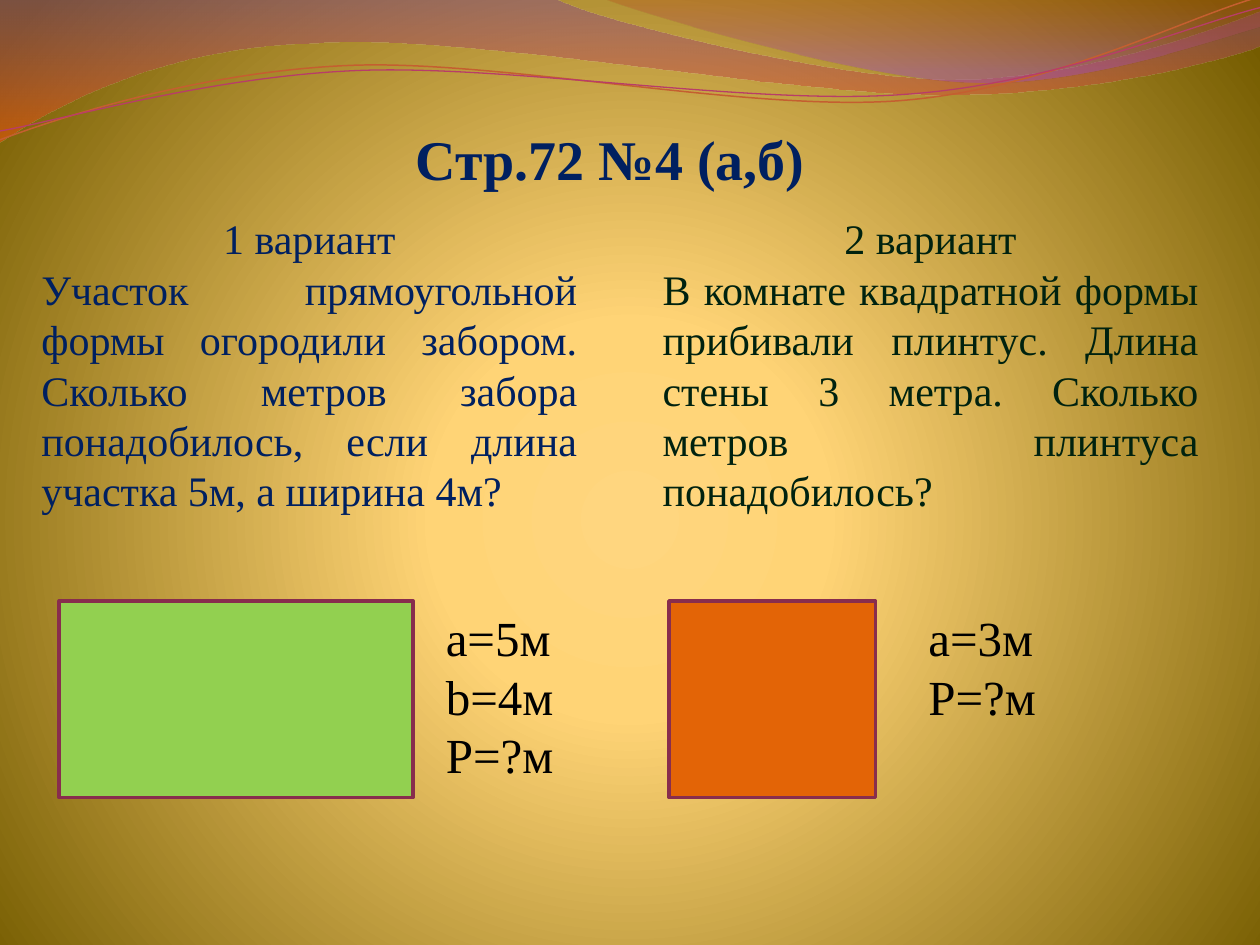
import math
from dataclasses import dataclass
from typing import Optional

import pptx
import pptx.dml.color
import pptx.enum.shapes
import pptx.enum.text
import pptx.oxml
import pptx.oxml.ns
import pptx.util

Inches = pptx.util.Inches
Align = pptx.enum.text.PP_ALIGN
qn = pptx.oxml.ns.qn
SPACE = pptx.oxml.ns.nsdecls("a")


@dataclass(frozen=True)
class Theme:
    font: str = "Times New Roman"
    navy: str = "002060"
    green: str = "00220F"
    black: str = "000000"
    edge: str = "882D4D"
    head: int = 32
    body: int = 24
    note: int = 28
    glow: tuple = ((0, "FFD67F", 100), (25, "FFD476", 100), (100, "755C00", 100))


@dataclass(frozen=True)
class Wave:
    """Outline in slide inches: a start, then lines (2 numbers) or curves (6)."""
    frame: tuple
    start: tuple
    steps: tuple
    stops: tuple = ()
    color: Optional[str] = None
    width: float = 0
    turn: float = 0


@dataclass(frozen=True)
class Task:
    left: float
    color: str
    name: str
    text: str
    box_left: float
    box_width: float
    box_fill: str
    note_left: float
    note_height: float
    notes: tuple


THEME = Theme()
DOWN = '<a:lin ang="5400000" scaled="0"/>'
ROUND = ('<a:path path="circle"><a:fillToRect l="10000" t="110000" '
         'r="10000" b="100000"/></a:path>')

WAVES = (
    Wave((-0.01, -0.01, 10.02, 1.14), (0, 0),
         ((4.4, -0.01), (4.76, 0.17, 6.64, 0.63, 7.58, 0.63),
          (8.53, 0.63, 9.58, 0.26, 10, 0.09), (10.01, 0.36),
          (9.83, 0.44, 8.7, 0.76, 7.46, 0.75),
          (6.22, 0.75, 3.82, 0.28, 2.57, 0.34),
          (1.29, 0.36, 0.46, 0.83, -0.01, 1.13), (0, 0)),
         stops=((0, "834591", 45), (100, "F35307", 55))),
    Wave((4.79, -0.01, 5.21, 0.7), (4.79, -0.01),
         ((5.09, 0.11, 6.82, 0.62, 7.69, 0.65),
          (8.56, 0.69, 9.61, 0.32, 10, 0.21), (10, 0), (4.79, -0.01)),
         stops=((0, "B74915", 30), (80, "A14BB4", 45))),
    Wave((-0.02, 0.22, 10.02, 0.71), (0, 1.11),
         ((0.48, 0.93, 1.58, 0.57, 2.77, 0.52),
          (3.95, 0.47, 5.93, 0.89, 7.13, 0.8),
          (8.33, 0.71, 9.38, 0.15, 9.98, -0.02)),
         color="C45F30", width=0.85, turn=-2.7),
    Wave((-0.02, 0.3, 10.03, 0.58), (0, 1.04),
         ((0.47, 0.96, 1.64, 0.61, 2.83, 0.56),
          (4.03, 0.51, 5.97, 0.84, 7.17, 0.75),
          (8.36, 0.67, 9.41, 0.21, 10, 0.06)),
         color="B83D68", width=0.75, turn=-2.7),
)

TASKS = (
    Task(0.23, THEME.navy, "1 вариант",
         "Участок прямоугольной формы огородили забором. Сколько метров забора "
         "понадобилось, если длина участка 5м, а ширина 4м?",
         0.47, 2.81, "92D050", 3.44, 1.51, ("а=5м", "b=4м", "Р=?м")),
    Task(5.16, THEME.green, "2 вариант",
         "В комнате квадратной формы прибивали плинтус. Длина стены 3 метра. "
         "Сколько метров плинтуса понадобилось?",
         5.31, 1.64, "E36406", 7.27, 1.04, ("а=3м", "Р=?м")),
)


def rgb(code: str):
    return pptx.dml.color.RGBColor.from_string(code)


def shade(fill, root, stops: tuple, path: str) -> None:
    """Give a fill gradient stops with opacity and a direction."""
    fill.gradient()
    marks = ""
    for pos, code, alpha in stops:
        veil = f'<a:alpha val="{alpha * 1000}"/>' if alpha < 100 else ""
        marks += (f'<a:gs pos="{pos * 1000}"><a:srgbClr val="{code}">'
                  f'{veil}</a:srgbClr></a:gs>')
    old = root.find(".//" + qn("a:gradFill"))
    new = pptx.oxml.parse_xml(
        f'<a:gradFill {SPACE} rotWithShape="1">'
        f'<a:gsLst>{marks}</a:gsLst>{path}</a:gradFill>')
    old.getparent().replace(old, new)


def place(wave: Wave, x: float, y: float) -> tuple:
    """Undo the turn of a wave and measure a point from its frame, in EMU."""
    left, top, width, height = wave.frame
    dx, dy = x - left - width / 2, y - top - height / 2
    angle = math.radians(-wave.turn)
    cos, sin = math.cos(angle), math.sin(angle)
    return (Inches(dx * cos - dy * sin + width / 2),
            Inches(dx * sin + dy * cos + height / 2))


def bend(shape, wave: Wave) -> None:
    """Give a freeform the true curves of a wave."""
    def mark(tag: str, nums: tuple) -> str:
        spots = (place(wave, *nums[i:i + 2]) for i in range(0, len(nums), 2))
        points = "".join(f'<a:pt x="{x}" y="{y}"/>' for x, y in spots)
        return f"<a:{tag}>{points}</a:{tag}>"

    width, height = map(Inches, wave.frame[2:])
    marks = mark("moveTo", wave.start) + "".join(
        mark("lnTo" if len(step) == 2 else "cubicBezTo", step)
        for step in wave.steps)
    end = "<a:close/>" if wave.stops else ""
    old = shape._element.spPr.find(".//" + qn("a:path"))
    new = pptx.oxml.parse_xml(
        f'<a:path {SPACE} w="{width}" h="{height}">{marks}{end}</a:path>')
    old.getparent().replace(old, new)


def draw_wave(slide, wave: Wave) -> None:
    pen = slide.shapes.build_freeform(*place(wave, *wave.start), scale=1.0)
    pen.add_line_segments([place(wave, *step[-2:]) for step in wave.steps],
                          close=False)
    shape = pen.convert_to_shape()
    bend(shape, wave)
    shape.left, shape.top, shape.width, shape.height = map(Inches, wave.frame)
    shape.rotation = wave.turn
    shape.shadow.inherit = False
    if wave.stops:
        shade(shape.fill, shape._element.spPr, wave.stops, DOWN)
        shape.line.fill.background()
    else:
        shape.fill.background()
        shape.line.color.rgb = rgb(wave.color)
        shape.line.width = pptx.util.Pt(wave.width)


def write(shape, lines: tuple, size: int, color: str, bold: bool = False) -> None:
    """Fill a shape with (text, alignment) lines of one style."""
    frame = shape.text_frame
    frame.word_wrap = True
    frame.auto_size = pptx.enum.text.MSO_AUTO_SIZE.SHAPE_TO_FIT_TEXT
    frame.vertical_anchor = pptx.enum.text.MSO_ANCHOR.TOP
    frame.text = "\n".join(text for text, _ in lines)
    for para, (_, align) in zip(frame.paragraphs, lines):
        para.alignment = align
        para.font.name = THEME.font
        para.font.size = pptx.util.Pt(size)
        para.font.bold = bold
        para.font.color.rgb = rgb(color)


def draw_title(slide, text: str) -> None:
    title = slide.shapes.title
    title.left, title.top = Inches(1.8), Inches(0.94)
    title.width, title.height = Inches(6.09), Inches(0.64)
    write(title, ((text, Align.CENTER),), THEME.head, THEME.navy, bold=True)


def draw_task(slide, task: Task) -> None:
    shapes, top = slide.shapes, Inches(4.77)
    story = shapes.add_textbox(
        Inches(task.left), Inches(1.64), Inches(4.45), Inches(2.52))
    write(story, ((task.name, Align.CENTER), (task.text, Align.JUSTIFY)),
          THEME.body, task.color)
    box = shapes.add_shape(
        pptx.enum.shapes.MSO_SHAPE.RECTANGLE,
        Inches(task.box_left), top, Inches(task.box_width), Inches(1.56))
    box.shadow.inherit = False
    box.fill.solid()
    box.fill.fore_color.rgb = rgb(task.box_fill)
    box.line.color.rgb = rgb(THEME.edge)
    box.line.width = pptx.util.Pt(2)
    note = shapes.add_textbox(
        Inches(task.note_left), top, Inches(1.8), Inches(task.note_height))
    write(note, tuple((line, Align.LEFT) for line in task.notes),
          THEME.note, THEME.black)


def main() -> None:
    deck = pptx.Presentation()
    deck.slide_width, deck.slide_height = Inches(10), Inches(7.5)
    slide = deck.slides.add_slide(deck.slide_layouts.get_by_name("Title Only"))
    shade(slide.background.fill, slide._element, THEME.glow, ROUND)
    for wave in WAVES:
        draw_wave(slide, wave)
    draw_title(slide, "Стр.72 №4 (а,б)")
    for task in TASKS:
        draw_task(slide, task)
    deck.save("out.pptx")


if __name__ == "__main__":
    main()
